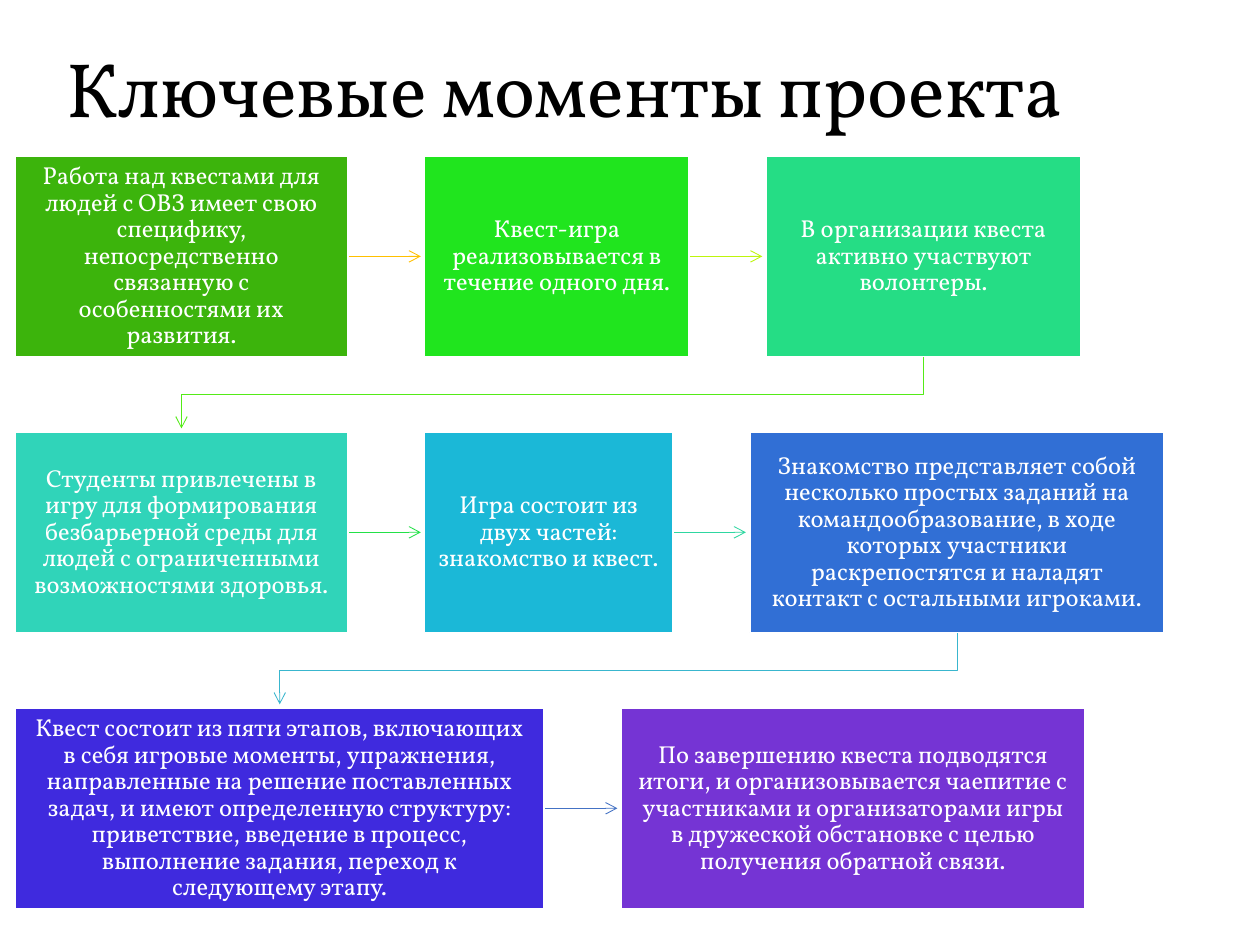
"""Build the slide with the key moments of the quest project."""
from dataclasses import dataclass

from lxml.etree import SubElement
from pptx import Presentation
from pptx.dml.color import RGBColor
from pptx.enum.shapes import MSO_CONNECTOR, MSO_SHAPE
from pptx.enum.text import MSO_ANCHOR, PP_ALIGN
from pptx.oxml.ns import qn
from pptx.util import Inches, Pt


@dataclass(frozen=True)
class Theme:
    font: str = "Vollkorn"
    dark: str = "000000"
    light: str = "FFFFFF"
    title_size: float = 44
    step_size: float = 14
    border: float = 1
    arrow: float = 0.5


@dataclass(frozen=True)
class Step:
    text: str
    width: float
    fill: str
    arrow: str = ""


@dataclass(frozen=True)
class Spot:
    left: float
    top: float
    width: float

    @property
    def right(self) -> float:
        return self.left + self.width

    @property
    def center(self) -> float:
        return self.left + self.width / 2


THEME = Theme()
LEFT, TOP, HEIGHT = 0.12, 1.24, 1.59
COLUMN_GAP, ROW_GAP, ARROW_GAP = 0.61, 0.6, 0.03

ROWS = [
    [
        Step("Работа над квестами для людей с ОВЗ имеет свою специфику, непосредственно "
             "связанную с особенностями их развития.", 2.64, "3CB40C", "FFC000"),
        Step("Квест-игра реализовывается в течение одного дня.", 2.1, "20E51E", "BEF50C"),
        Step("В организации квеста активно участвуют волонтеры.", 2.5, "25DD85", "53EB17"),
    ],
    [
        Step("Студенты привлечены в игру для формирования безбарьерной среды для людей "
             "с ограниченными возможностями здоровья.", 2.64, "30D4B9", "23E148"),
        Step("Игра состоит из двух частей: знакомство и квест.", 1.97, "1BB8D7", "2ED7A1"),
        Step("Знакомство представляет собой несколько простых заданий на "
             "командообразование, в ходе которых участники раскрепостятся и наладят "
             "контакт с остальными игроками.", 3.29, "316FD5", "39B6CE"),
    ],
    [
        Step("Квест состоит из пяти этапов, включающих в себя игровые моменты, упражнения, "
             "направленные на решение поставленных задач, и имеют определенную структуру: "
             "приветствие, введение в процесс, выполнение задания, переход к следующему "
             "этапу.", 4.2, "3F2ADE", "4472C4"),
        Step("По завершению квеста подводятся итоги, и организовывается чаепитие с "
             "участниками и организаторами игры в дружеской обстановке с целью получения "
             "обратной связи.", 3.68, "7534D4"),
    ],
]


def write(box, text: str, *, size: float, color: str, align=PP_ALIGN.LEFT,
          inset: float = 0.1, after: float = 0) -> None:
    """Put one vertically centred paragraph into a shape."""
    frame = box.text_frame
    frame.word_wrap = True
    frame.vertical_anchor = MSO_ANCHOR.MIDDLE
    frame.margin_left = frame.margin_right = Inches(inset)
    frame.margin_top = frame.margin_bottom = Inches(inset)
    para = frame.paragraphs[0]
    para.alignment = align
    para.line_spacing = 0.9
    para.space_after = Pt(after)
    span = para.add_run()
    span.text = text
    span.font.name = THEME.font
    span.font.size = Pt(size)
    span.font.color.rgb = RGBColor.from_string(color)


def style_arrow(link, color: str) -> None:
    """Give a connector or open path its colour and an arrowhead at the end."""
    link.line.width = Pt(THEME.arrow)
    link.line.color.rgb = RGBColor.from_string(color)
    SubElement(link.line._get_or_add_ln(), qn("a:tailEnd"), type="arrow")
    SubElement(link._element.spPr, qn("a:effectLst"))


def draw_arrow(page, start: Spot, end: Spot, color: str) -> None:
    """Link two steps, straight within a row and bent between rows."""
    if start.top == end.top:
        middle = Inches(start.top + HEIGHT / 2)
        link = page.shapes.add_connector(
            MSO_CONNECTOR.STRAIGHT, Inches(start.right), middle,
            Inches(end.left - ARROW_GAP), middle)
    else:
        bottom = start.top + HEIGHT
        bend = (bottom + end.top) / 2
        points = [(start.center, bend), (end.center, bend),
                  (end.center, end.top - ARROW_GAP)]
        builder = page.shapes.build_freeform(Inches(start.center), Inches(bottom))
        builder.add_line_segments([(Inches(x), Inches(y)) for x, y in points], close=False)
        link = builder.convert_to_shape()
        link.fill.background()
    style_arrow(link, color)


def draw_step(page, step: Step, spot: Spot) -> None:
    """Draw one coloured step box with its text."""
    box = page.shapes.add_shape(MSO_SHAPE.RECTANGLE, Inches(spot.left), Inches(spot.top),
                                Inches(spot.width), Inches(HEIGHT))
    box.shadow.inherit = False
    box.fill.solid()
    box.fill.fore_color.rgb = RGBColor.from_string(step.fill)
    box.line.color.rgb = RGBColor.from_string(THEME.light)
    box.line.width = Pt(THEME.border)
    write(box, step.text, size=THEME.step_size, color=THEME.light,
          align=PP_ALIGN.CENTER, inset=0.11, after=5)


def place_steps() -> list[tuple[Step, Spot]]:
    """Lay the steps out in rows with equal gaps."""
    placed = []
    for index, row in enumerate(ROWS):
        left = LEFT
        for step in row:
            placed.append((step, Spot(left, TOP + index * (HEIGHT + ROW_GAP), step.width)))
            left += step.width + COLUMN_GAP
    return placed


def main() -> None:
    """Build and save the deck."""
    deck = Presentation()
    deck.slide_width, deck.slide_height = Inches(10), Inches(7.5)
    page = deck.slides.add_slide(deck.slide_layouts[6])
    title = page.shapes.add_textbox(Inches(0.43), Inches(0.01), Inches(8.62), Inches(1.45))
    write(title, "Ключевые моменты проекта", size=THEME.title_size, color=THEME.dark)
    placed = place_steps()
    for (step, start), (_, end) in zip(placed, placed[1:]):
        draw_arrow(page, start, end, step.arrow)
    for step, spot in placed:
        draw_step(page, step, spot)
    deck.save("out.pptx")


if __name__ == "__main__":
    main()
